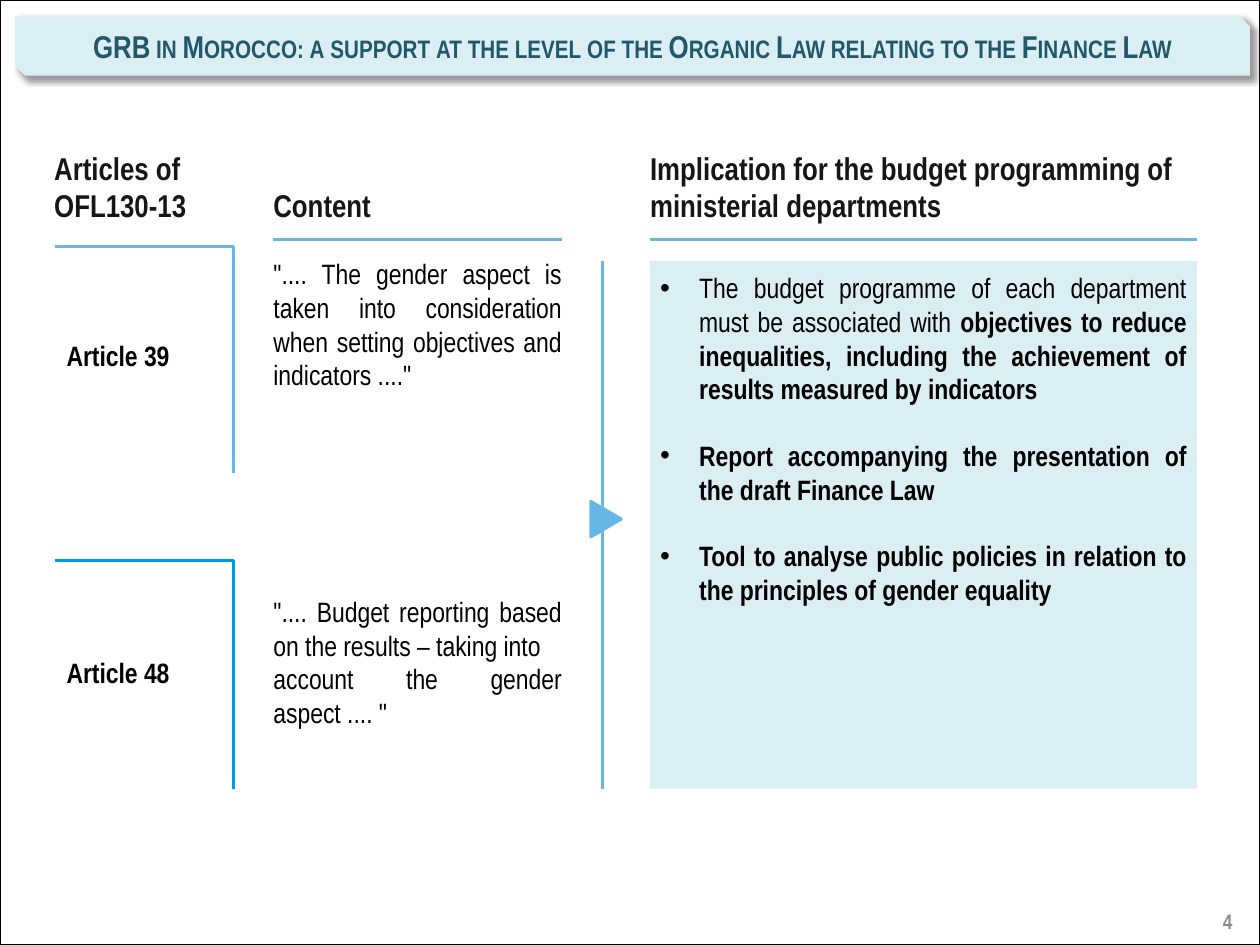
"""Build the slide on gender budgeting in the organic finance law."""
from dataclasses import dataclass

import lxml.etree
import pptx
import pptx.dml.color
import pptx.enum.shapes
import pptx.enum.text
import pptx.oxml.ns
import pptx.util

Inches = pptx.util.Inches
Pt = pptx.util.Pt
Align = pptx.enum.text.PP_ALIGN
Anchor = pptx.enum.text.MSO_ANCHOR
Shape = pptx.enum.shapes.MSO_SHAPE
qn = pptx.oxml.ns.qn

FONT = "Arial Narrow"
COLORS = {
    "black": "000000",
    "head": "161616",
    "title": "215968",
    "panel": "DBEEF4",
    "sky": "67B7E6",
    "blue": "009DDC",
    "grey": "8C8C8C",
}
LEFT, MID, RIGHT = 0.44, 2.17, 5.16
RULE, TOP, BOTTOM = 1.9, 2.07, 6.26


@dataclass
class Label:
    text: str
    box: tuple[float, float, float, float]
    size: int = 16
    color: str = "black"
    bold: bool = True
    align: Align = Align.LEFT
    inset: tuple[float, float, float, float] = (0.1, 0.05, 0.1, 0.05)
    anchor: Anchor = Anchor.TOP
    grow: bool = True


@dataclass
class Bracket:
    top: float
    bottom: float
    color: str


@dataclass
class Rule:
    start: tuple[float, float]
    end: tuple[float, float]
    width: float


@dataclass
class Bullet:
    plain: str
    bold: str


def heading(text: str, left: float, top: float, width: float, height: float) -> Label:
    return Label(text, (left, top, width, height), 18, "head", inset=(0, 0, 0, 0))


def quote(text: str, top: float) -> Label:
    return Label(text, (MID, top, 2.29, 1.16), bold=False,
                 align=Align.JUSTIFY, inset=(0, 0.08, 0, 0))


LABELS = [
    heading("Articles of OFL130-13", 0.43, 1.18, 1.41, 0.61),
    heading("Content", MID, 1.48, 1.7, 0.3),
    heading("Implication for the budget programming of ministerial departments",
            RIGHT, 1.18, 4.34, 0.61),
    Label("Article 39", (0.43, 2.64, 1.26, 0.37)),
    Label("Article 48", (0.43, 5.15, 1.26, 0.37)),
    quote('".... The gender aspect is taken into consideration when setting '
          'objectives and indicators ...."', 1.96),
    quote('".... Budget reporting based on the results – taking into\n'
          'account the gender aspect .... "', 4.64),
    Label("4", (7.55, 7.11, 2.33, 0.4), 12, "grey", align=Align.RIGHT,
          anchor=Anchor.MIDDLE, grow=False),
]
BRACKETS = [Bracket(1.96, 3.75, "sky"), Bracket(4.45, BOTTOM, "blue")]
RULES = [
    Rule((MID, RULE), (4.46, RULE), 1.5),
    Rule((RIGHT, RULE), (9.5, RULE), 1.5),
    Rule((4.78, BOTTOM), (4.78, TOP), 1.75),
]
BULLETS = [
    Bullet("The budget programme of each department must be associated with ",
           "objectives to reduce inequalities, including the achievement of "
           "results measured by indicators"),
    Bullet("", "Report accompanying the presentation of the draft Finance Law"),
    Bullet("", "Tool to analyse public policies in relation to the principles "
               "of gender equality"),
]


def rgb(name: str) -> pptx.dml.color.RGBColor:
    return pptx.dml.color.RGBColor.from_string(COLORS[name])


def style(run, size: int, color: str, bold: bool) -> None:
    run.font.name = FONT
    run.font.size = Pt(size)
    run.font.bold = bold
    run.font.color.rgb = rgb(color)


def set_frame(frame, inset: tuple, anchor: Anchor) -> None:
    frame.word_wrap = True
    frame.vertical_anchor = anchor
    (frame.margin_left, frame.margin_top,
     frame.margin_right, frame.margin_bottom) = map(Inches, inset)


def fill_text(frame, label: Label) -> None:
    set_frame(frame, label.inset, label.anchor)
    frame.text = label.text
    for para in frame.paragraphs:
        para.alignment = label.align
        for run in para.runs:
            style(run, label.size, label.color, label.bold)


def add_label(slide, label: Label) -> None:
    frame = slide.shapes.add_textbox(*map(Inches, label.box)).text_frame
    fill_text(frame, label)
    if label.grow:
        frame.auto_size = pptx.enum.text.MSO_AUTO_SIZE.SHAPE_TO_FIT_TEXT


def add_block(slide, kind: Shape, box: tuple, fill: str = "", line: str = "",
              width: float = 1):
    block = slide.shapes.add_shape(kind, *map(Inches, box))
    block.shadow.inherit = False
    if fill:
        block.fill.solid()
        block.fill.fore_color.rgb = rgb(fill)
    else:
        block.fill.background()
    if line:
        block.line.color.rgb = rgb(line)
        block.line.width = Pt(width)
    else:
        block.line.fill.background()
    return block


def add_rule(slide, rule: Rule) -> None:
    line = slide.shapes.add_connector(
        pptx.enum.shapes.MSO_CONNECTOR.STRAIGHT,
        *map(Inches, rule.start + rule.end))
    line.line.color.rgb = rgb("sky")
    line.line.width = Pt(rule.width)
    lxml.etree.SubElement(line._element.spPr, qn("a:effectLst"))


def add_bracket(slide, item: Bracket) -> None:
    side = Inches(1.85)
    pen = slide.shapes.build_freeform(Inches(LEFT), Inches(item.top))
    pen.add_line_segments(
        [(side, Inches(item.top)), (side, Inches(item.bottom))], close=False)
    shape = pen.convert_to_shape()
    shape.shadow.inherit = False
    shape.fill.background()
    shape.line.color.rgb = rgb(item.color)
    shape.line.width = Pt(1.75)


def add_panel(slide) -> None:
    frame = add_block(slide, Shape.RECTANGLE,
                      (RIGHT, TOP, 4.34, BOTTOM - TOP), "panel").text_frame
    set_frame(frame, (0.08, 0.08, 0.08, 0), Anchor.TOP)
    for i, item in enumerate(BULLETS):
        para = frame.add_paragraph() if i else frame.paragraphs[0]
        para.alignment = Align.JUSTIFY
        para.space_before = Pt(19 if i else 0)
        props = para._p.get_or_add_pPr()
        props.set("marL", str(Inches(0.31)))
        props.set("indent", str(Inches(-0.31)))
        lxml.etree.SubElement(props, qn("a:buFont"), typeface="Arial")
        lxml.etree.SubElement(props, qn("a:buChar"), char="•")
        for text, bold in ((item.plain, False), (item.bold, True)):
            if text:
                run = para.add_run()
                run.text = text
                style(run, 16, "black", bold)


def add_title(slide) -> None:
    box = (0.12, 0.13, 9.8, 0.47)
    bar = add_block(slide, Shape.SNIP_2_DIAG_RECTANGLE, box, "panel")
    fill_text(bar.text_frame, Label(
        "GRB in Morocco: a support at the level of the Organic Law relating "
        "to the Finance Law", box, 18, "title", align=Align.CENTER,
        anchor=Anchor.MIDDLE))
    bar.text_frame.paragraphs[0].runs[0]._r.get_or_add_rPr().set("cap", "small")
    effects = bar._element.spPr.find(qn("a:effectLst"))
    shade = lxml.etree.SubElement(
        effects, qn("a:outerShdw"), blurRad=str(Pt(4)), dist=str(Pt(3)),
        dir="2700000", algn="tl", rotWithShape="0")
    tint = lxml.etree.SubElement(shade, qn("a:srgbClr"), val=COLORS["black"])
    lxml.etree.SubElement(tint, qn("a:alpha"), val="40000")


def main() -> None:
    deck = pptx.Presentation()
    deck.slide_width, deck.slide_height = Inches(10), Inches(7.5)
    slide = deck.slides.add_slide(deck.slide_layouts[6])
    add_block(slide, Shape.RECTANGLE, (0, 0, 10, 7.5), line="black", width=0.75)
    for item in BRACKETS:
        add_bracket(slide, item)
    for rule in RULES:
        add_rule(slide, rule)
    arrow = add_block(slide, Shape.ISOSCELES_TRIANGLE, (4.67, 4, 0.28, 0.24),
                      "sky", "sky", 1.75)
    arrow.rotation = 90
    add_panel(slide)
    add_title(slide)
    for label in LABELS:
        add_label(slide, label)
    deck.save("out.pptx")


if __name__ == "__main__":
    main()
